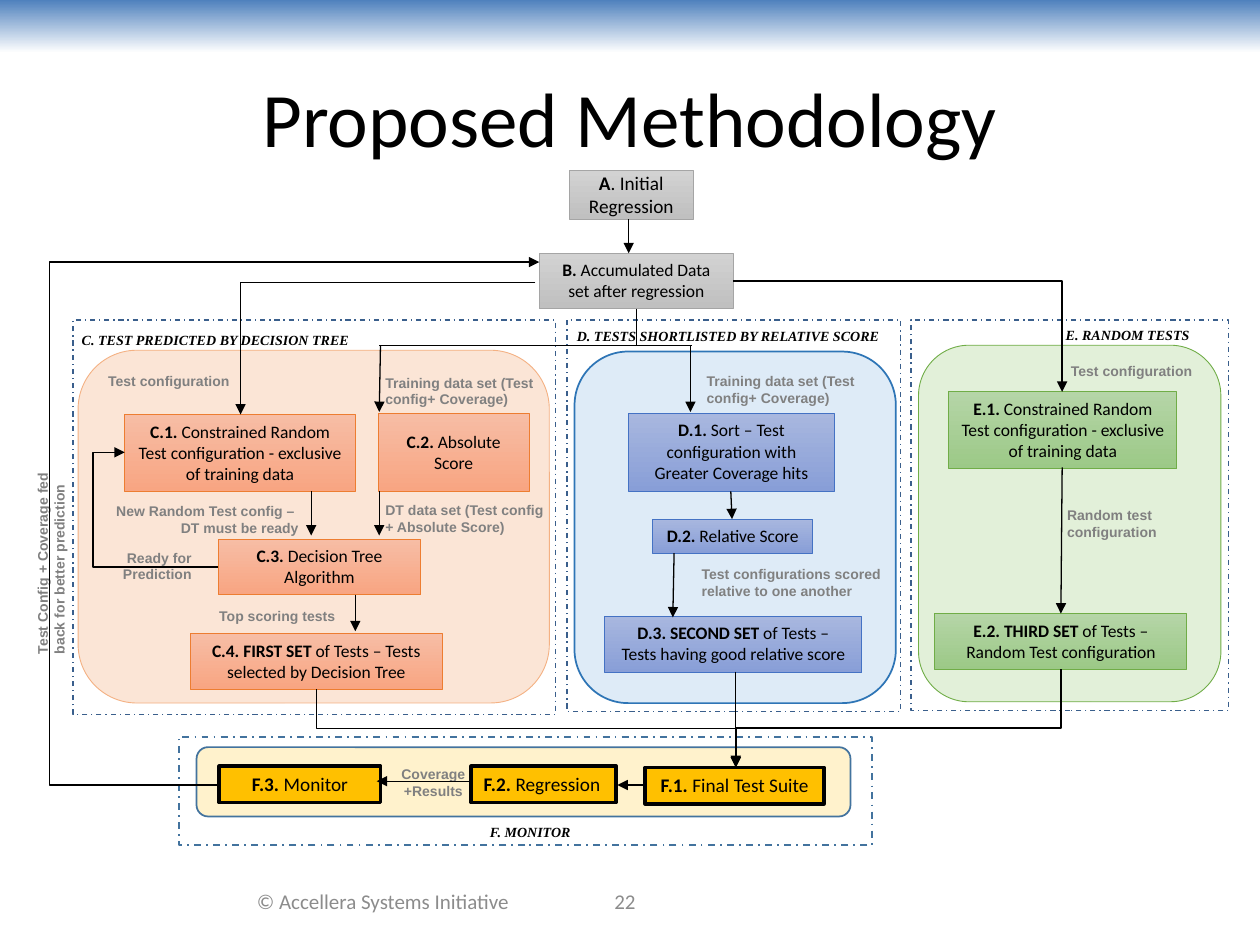
from typing import NamedTuple

from pptx import Presentation
from pptx.dml.color import RGBColor
from pptx.enum.dml import MSO_LINE
from pptx.enum.shapes import MSO_CONNECTOR, MSO_SHAPE
from pptx.enum.text import MSO_ANCHOR, PP_ALIGN
from pptx.oxml.ns import qn
from pptx.oxml.xmlchemy import OxmlElement
from pptx.util import Inches, Pt

RECT, ROUND = MSO_SHAPE.RECTANGLE, MSO_SHAPE.ROUNDED_RECTANGLE
LINE, ELBOW = MSO_CONNECTOR.STRAIGHT, MSO_CONNECTOR.ELBOW
LEFT, MID, RIGHT = PP_ALIGN.LEFT, PP_ALIGN.CENTER, PP_ALIGN.RIGHT
TOP, MIDDLE = MSO_ANCHOR.TOP, MSO_ANCHOR.MIDDLE
DASH = MSO_LINE.DASH_DOT
BLACK, GREY = "000000", "808080"


class Look(NamedTuple):
    fill: tuple
    edge: str
    width: float = 0.5
    size: int = 10


class Box(NamedTuple):
    area: tuple
    lead: str
    rest: str
    look: Look
    anchor: MSO_ANCHOR = TOP
    align: PP_ALIGN = MID
    wrap: bool = True


class Label(NamedTuple):
    area: tuple
    text: str
    align: PP_ALIGN = LEFT
    turn: int = 0


class Elbow(NamedTuple):
    start: tuple
    end: tuple
    kind: str = "bentConnector3"
    adj: float = 0.5
    down: bool = False


SILVER = Look(("D2D2D2", "C0C0C0"), "A5A5A5")
ORANGE = Look(("F7BDA5", "F8A582"), "ED7D31")
BLUE = Look(("A8B7DF", "889ED7"), "4472C4")
GREEN = Look(("B5D5A7", "9CC987"), "70AD47")
GOLD = Look(("FFC000",), BLACK, 2, 11)

PANELS = [
    ((1.56, 5.93, 5.19, 0.55), Look(("FFF2CC",), "43739E", 1)),
    ((7.29, 2.74, 2.4, 2.83), Look(("E2F0D9",), "70AD47")),
    ((4.56, 2.79, 2.55, 2.79), Look(("DEEBF7",), "2E75B6", 1)),
    ((0.62, 2.78, 3.74, 2.8), Look(("FBE5D6",), "F4B183")),
]
FRAMES = [
    ((0.58, 2.54, 3.83, 3.13), Look((), "3A5F8C", 0.75)),
    ((4.5, 2.54, 2.65, 3.11), Look((), "3A5F8C", 0.75)),
    ((7.23, 2.54, 2.52, 3.1), Look((), "3A5F8C", 0.75)),
    ((1.42, 5.85, 5.5, 0.86), Look((), "43739E", 1)),
]
RANDOM = "Constrained Random Test configuration - exclusive of training data"
BOXES = [
    Box((4.52, 1.35, 0.98, 0.39), "A", ". Initial Regression", SILVER._replace(size=11), MIDDLE),
    Box((4.28, 2.01, 1.54, 0.44), "B. ", "Accumulated Data set after regression", SILVER),
    Box((0.99, 3.29, 1.83, 0.61), "C.1. ", RANDOM, ORANGE),
    Box((3, 3.28, 1.2, 0.62), "C.2. ", "Absolute Score", ORANGE, MIDDLE),
    Box((1.73, 4.28, 1.61, 0.44), "C.3. ", "Decision Tree Algorithm", ORANGE),
    Box((1.51, 5.03, 2, 0.44), "C.4. FIRST SET", " of Tests – Tests selected by Decision Tree", ORANGE),
    Box((4.99, 3.28, 1.63, 0.62), "D.1. ",
        "Sort – Test configuration with\nGreater Coverage hits", BLUE),
    Box((5.18, 4.12, 1.27, 0.27), "D.2. ", "Relative Score", BLUE, wrap=False),
    Box((4.8, 4.89, 2.04, 0.45), "D.3. SECOND SET",
        " of Tests –\nTests having good relative score", BLUE),
    Box((7.53, 3.11, 1.81, 0.61), "E.1. ", RANDOM, GREEN),
    Box((7.42, 4.87, 2, 0.44), "E.2. THIRD SET", " of Tests – Random Test configuration", GREEN),
    Box((5.12, 6.09, 1.42, 0.29), "F.1. ", "Final Test Suite", GOLD),
    Box((3.74, 6.08, 1.15, 0.29), "F.2. ", "Regression", GOLD, align=LEFT),
    Box((1.74, 6.08, 1.28, 0.29), "F.3. ", "Monitor", GOLD),
]
HEADS = [
    Label((0.55, 2.58, 3.52, 0.24), "C. TEST PREDICTED BY DECISION TREE"),
    Label((4.48, 2.55, 3.81, 0.24), "D. TESTS SHORTLISTED BY RELATIVE SCORE"),
    Label((8.36, 2.54, 1.91, 0.24), "E. RANDOM TESTS"),
    Label((3.79, 6.49, 1.91, 0.24), "F. MONITOR"),
]
TRAIN = "Training data set (Test config+ Coverage)"
NOTES = [
    Label((5.51, 2.91, 1.65, 0.37), TRAIN),
    Label((2.96, 2.92, 1.78, 0.37), TRAIN),
    Label((8.4, 2.83, 2.65, 0.24), "Test configuration"),
    Label((0.76, 2.91, 2.43, 0.24), "Test configuration"),
    Label((5.47, 4.44, 1.77, 0.37), "Test configurations scored relative to one another"),
    Label((8.37, 3.97, 1.05, 0.37), "Random test configuration"),
    Label((0.64, 3.94, 1.83, 0.37), "New Random Test config – \nDT must be ready", RIGHT),
    Label((2.96, 3.93, 1.95, 0.37), "DT data set (Test config\n+ Absolute Score)"),
    Label((1.61, 4.77, 1.15, 0.24), "Top scoring tests", RIGHT),
    Label((2.71, 6.03, 1.46, 0.37), "Coverage\n+Results", MID),
    Label((0.37, 4.31, 1.25, 0.37), "Ready for Prediction", RIGHT),
    Label((-0.51, 4.19, 1.83, 0.37), "Test Config + Coverage fed back for better prediction", turn=270),
]
FOOT = [Label((1.83, 6.95, 2.42, 0.4), "© Accellera Systems Initiative", MID),
        Label((4, 6.95, 1.92, 0.4), "22", MID)]
PLAIN = [((5.05, 2.45), (5.05, 2.74)), ((3.01, 2.74), (5.05, 2.74)), ((5.05, 2.74), (5.49, 2.74))]
ARROWS = [
    ((4.99, 1.74), (4.99, 2.01)), ((3.02, 2.74), (3.01, 3.27)), ((5.48, 2.74), (5.48, 3.27)),
    ((8.43, 3.71), (8.42, 4.87)), ((5.8, 3.9), (5.81, 4.12)), ((5.35, 4.39), (5.34, 4.9)),
    ((2.47, 3.9), (2.47, 4.25)), ((3.01, 3.9), (3.01, 4.25)), ((2.82, 4.72), (2.82, 5.01)),
    ((5.84, 5.33), (5.84, 6.08)), ((5.12, 6.23), (4.9, 6.23)), ((3.74, 6.2), (2.99, 6.2)),
]
ELBOWS = [
    Elbow((4.25, 2.24), (1.91, 3.29), "bentConnector2"),
    Elbow((5.82, 2.23), (8.43, 3.11), "bentConnector2"),
    Elbow((1.74, 6.23), (4.28, 2.08), adj=-0.53),
    Elbow((1.73, 4.5), (0.99, 3.59), adj=1.34),
    Elbow((2.51, 5.47), (5.84, 6.09), down=True),
    Elbow((8.42, 5.31), (5.84, 6.09), adj=0.6, down=True),
]


def rgb(code: str) -> RGBColor:
    return RGBColor.from_string(code)


def style(item, font: str, size: float, color: str, bold=False, slant=False) -> None:
    item.font.name, item.font.size = font, Pt(size)
    item.font.bold, item.font.italic = bold, slant
    item.font.color.rgb = rgb(color)


def draw_shape(slide, kind, area: tuple, look: Look):
    """Add a shape; two fill colours make a top-to-bottom gradient, none means hollow."""
    shape = slide.shapes.add_shape(kind, *map(Inches, area))
    shape.shadow.inherit = False
    if len(look.fill) == 2:
        shape.fill.gradient()
        shape.fill.gradient_angle = 270
        for stop, code in zip(shape.fill.gradient_stops, look.fill):
            stop.color.rgb = rgb(code)
    elif look.fill:
        shape.fill.solid()
        shape.fill.fore_color.rgb = rgb(look.fill[0])
    else:
        shape.fill.background()
    if look.edge:
        shape.line.color.rgb, shape.line.width = rgb(look.edge), Pt(look.width)
    else:
        shape.line.fill.background()
    return shape


def draw_box(slide, box: Box) -> None:
    frame = draw_shape(slide, RECT, box.area, box.look).text_frame
    frame.word_wrap, frame.vertical_anchor = box.wrap, box.anchor
    first, *more = box.rest.split("\n")
    frame.text = "\n".join([box.lead, *more])
    frame.paragraphs[0].add_run().text = first
    for para in frame.paragraphs:
        para.alignment = box.align
        for run in para.runs:
            style(run, "Calibri", box.look.size, BLACK, bold=run.text == box.lead)


def draw_label(slide, label: Label, font: str, size: float, color: str,
               bold=True, slant=False, anchor=TOP) -> None:
    shape = slide.shapes.add_textbox(*map(Inches, label.area))
    shape.rotation = label.turn
    frame = shape.text_frame
    frame.word_wrap, frame.vertical_anchor = True, anchor
    frame.text = label.text
    for para in frame.paragraphs:
        para.alignment = label.align
        for run in para.runs:
            style(run, font, size, color, bold, slant)


def draw_line(slide, start: tuple, end: tuple, arrow=True, kind=LINE):
    line = slide.shapes.add_connector(kind, *map(Inches, start + end))
    line.line.color.rgb, line.line.width = rgb(BLACK), Pt(0.75)
    props = line._element.spPr
    if arrow:
        tip = OxmlElement("a:tailEnd")
        tip.set("type", "triangle")
        props.find(qn("a:ln")).append(tip)
    props.append(OxmlElement("a:effectLst"))
    return props


def draw_elbow(slide, elbow: Elbow) -> None:
    """Add a bent arrow; one that leaves downwards is laid flat, then turned by 90 degrees."""
    (x1, y1), (x2, y2) = start, end = elbow.start, elbow.end
    if elbow.down:
        cx, cy, dx, dy = (x1 + x2) / 2, (y1 + y2) / 2, (x2 - x1) / 2, (y2 - y1) / 2
        start, end = (cx - dy, cy + dx), (cx + dy, cy - dx)
    props = draw_line(slide, start, end, kind=ELBOW)
    if elbow.down:
        props.find(qn("a:xfrm")).set("rot", str(90 * 60000))
    shape = props.find(qn("a:prstGeom"))
    shape.set("prst", elbow.kind)
    if elbow.kind == "bentConnector3":
        guide = OxmlElement("a:gd")
        guide.set("name", "adj1")
        guide.set("fmla", f"val {round(elbow.adj * 100000)}")
        shape.find(qn("a:avLst")).append(guide)


def main() -> None:
    deck = Presentation()
    deck.slide_width, deck.slide_height = Inches(10), Inches(7.5)
    slide = deck.slides.add_slide(deck.slide_layouts[5])
    title = slide.shapes.title
    title.left, title.top, title.width, title.height = map(Inches, (0.5, 0.3, 9, 1.25))
    title.text_frame.text = "Proposed Methodology"
    title.text_frame.vertical_anchor = MIDDLE
    title.text_frame.paragraphs[0].alignment = MID
    style(title.text_frame.paragraphs[0].runs[0], "Calibri", 44, BLACK)

    draw_shape(slide, RECT, (0, 0, 10, 0.42), Look(("4F81BD", "FFFFFF"), ""))
    for area, look in PANELS:
        draw_shape(slide, ROUND, area, look)
    for area, look in FRAMES:
        draw_shape(slide, RECT, area, look).line.dash_style = DASH
    for box in BOXES:
        draw_box(slide, box)
    for label in HEADS:
        draw_label(slide, label, "Times New Roman", 8, BLACK, slant=True)
    for label in NOTES:
        draw_label(slide, label, "Arial", 8, GREY)
    for label in FOOT:
        draw_label(slide, label, "Calibri", 12, "8C8C8C", bold=False, anchor=MIDDLE)
    for start, end in PLAIN:
        draw_line(slide, start, end, arrow=False)
    for start, end in ARROWS:
        draw_line(slide, start, end)
    for elbow in ELBOWS:
        draw_elbow(slide, elbow)
    deck.save("out.pptx")


if __name__ == "__main__":
    main()
